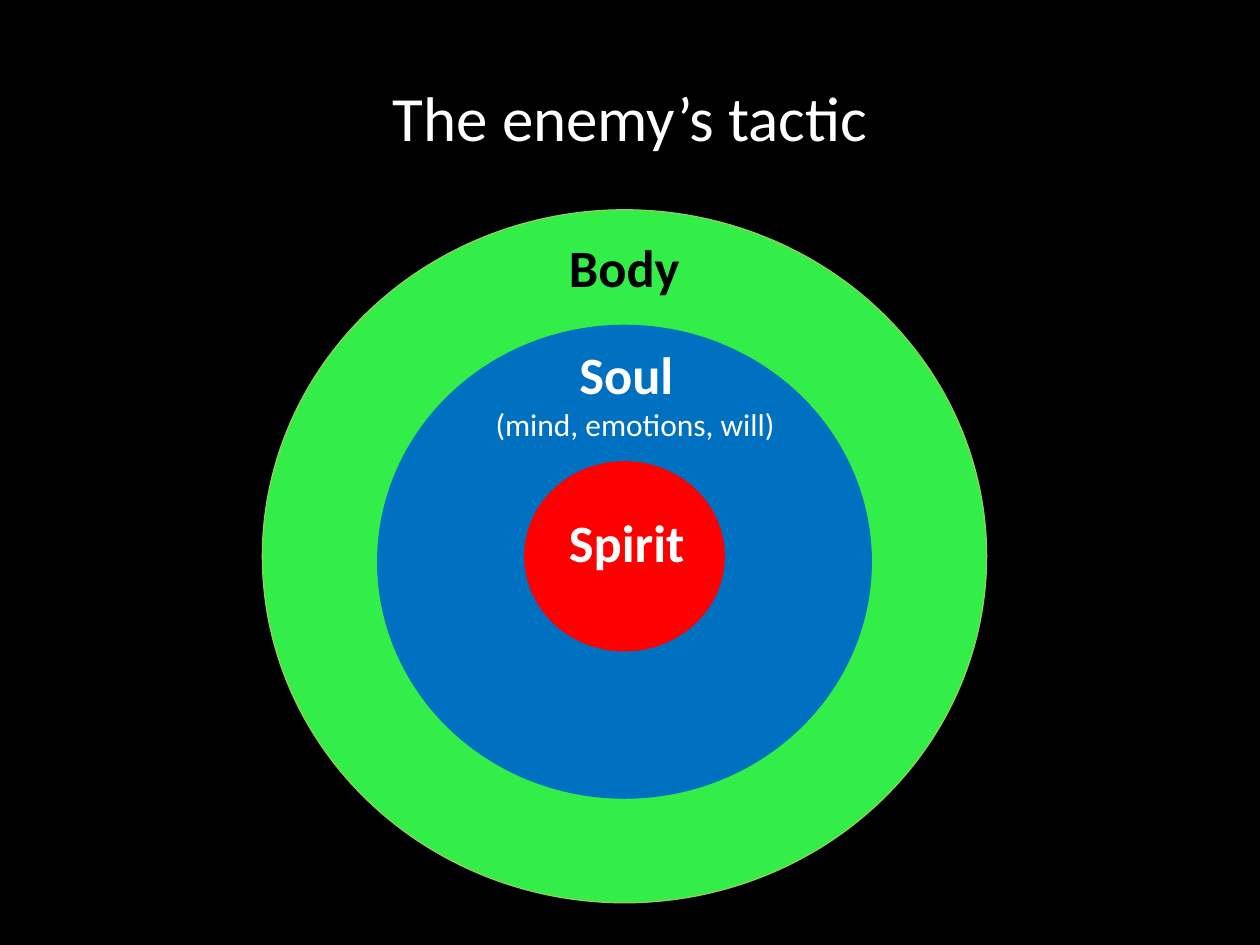
from pptx import Presentation
from pptx.dml.color import RGBColor
from pptx.enum.shapes import MSO_SHAPE
from pptx.enum.text import MSO_ANCHOR, MSO_AUTO_SIZE, PP_ALIGN
from pptx.util import Cm, Pt

COLORS = {
    "black": "000000",
    "white": "FFFFFF",
    "green": "33ED49",
    "lime": "92D050",
    "blue": "0070C0",
    "red": "FF0000",
}
TITLE = "The enemy’s tactic"
CENTER = 12.59
RINGS = [
    # top, width, height, fill, line
    (4.23, 14.6, 13.97, "green", "lime"),
    (6.56, 9.95, 9.53, "blue", "blue"),
    (9.31, 4.02, 3.81, "red", "red"),
]
LABELS = [
    ("Spirit", (11.22, 10.16, 3.81, 1.53), 30, True, "white"),
    ("Soul", (11.43, 6.77, 2.96, 1.53), 30, True, "white"),
    ("Body", (11.22, 4.62, 3.18, 1.53), 30, True, "black"),
    ("(mind, emotions, will)", (9.74, 8.04, 8.68, 1.03), 18, False, "white"),
]


def color(name):
    """Return the named colour."""
    return RGBColor.from_string(COLORS[name])


def style(par, size, bold, name):
    """Set the font of a paragraph."""
    font = par.font
    font.name = "Calibri"
    font.size = Pt(size)
    font.bold = bold
    font.color.rgb = color(name)


def add_title(slide):
    """Place and format the title."""
    title = slide.shapes.title
    title.left, title.top = Cm(1.27), Cm(0.76)
    title.width, title.height = Cm(22.86), Cm(3.18)
    frame = title.text_frame
    frame.text = TITLE
    frame.vertical_anchor = MSO_ANCHOR.MIDDLE
    par = frame.paragraphs[0]
    par.alignment = PP_ALIGN.CENTER
    style(par, 36, False, "white")


def add_ring(slide, top, width, height, fill, line):
    """Draw one ellipse on the shared centre line."""
    ring = slide.shapes.add_shape(
        MSO_SHAPE.OVAL, Cm(CENTER - width / 2), Cm(top), Cm(width), Cm(height)
    )
    ring.shadow.inherit = False
    ring.fill.solid()
    ring.fill.fore_color.rgb = color(fill)
    ring.line.color.rgb = color(line)
    ring.line.width = Pt(0.75)


def add_label(slide, text, box, size, bold, name):
    """Write one label."""
    frame = slide.shapes.add_textbox(*map(Cm, box)).text_frame
    frame.word_wrap = True
    frame.auto_size = MSO_AUTO_SIZE.SHAPE_TO_FIT_TEXT
    frame.text = text
    style(frame.paragraphs[0], size, bold, name)


def main():
    """Build the slide and save it."""
    deck = Presentation()
    deck.slide_width, deck.slide_height = Cm(25.4), Cm(19.05)
    slide = deck.slides.add_slide(deck.slide_layouts[5])
    back = slide.background.fill
    back.solid()
    back.fore_color.rgb = color("black")
    add_title(slide)
    for ring in RINGS:
        add_ring(slide, *ring)
    for label in LABELS:
        add_label(slide, *label)
    deck.save("out.pptx")


if __name__ == "__main__":
    main()
